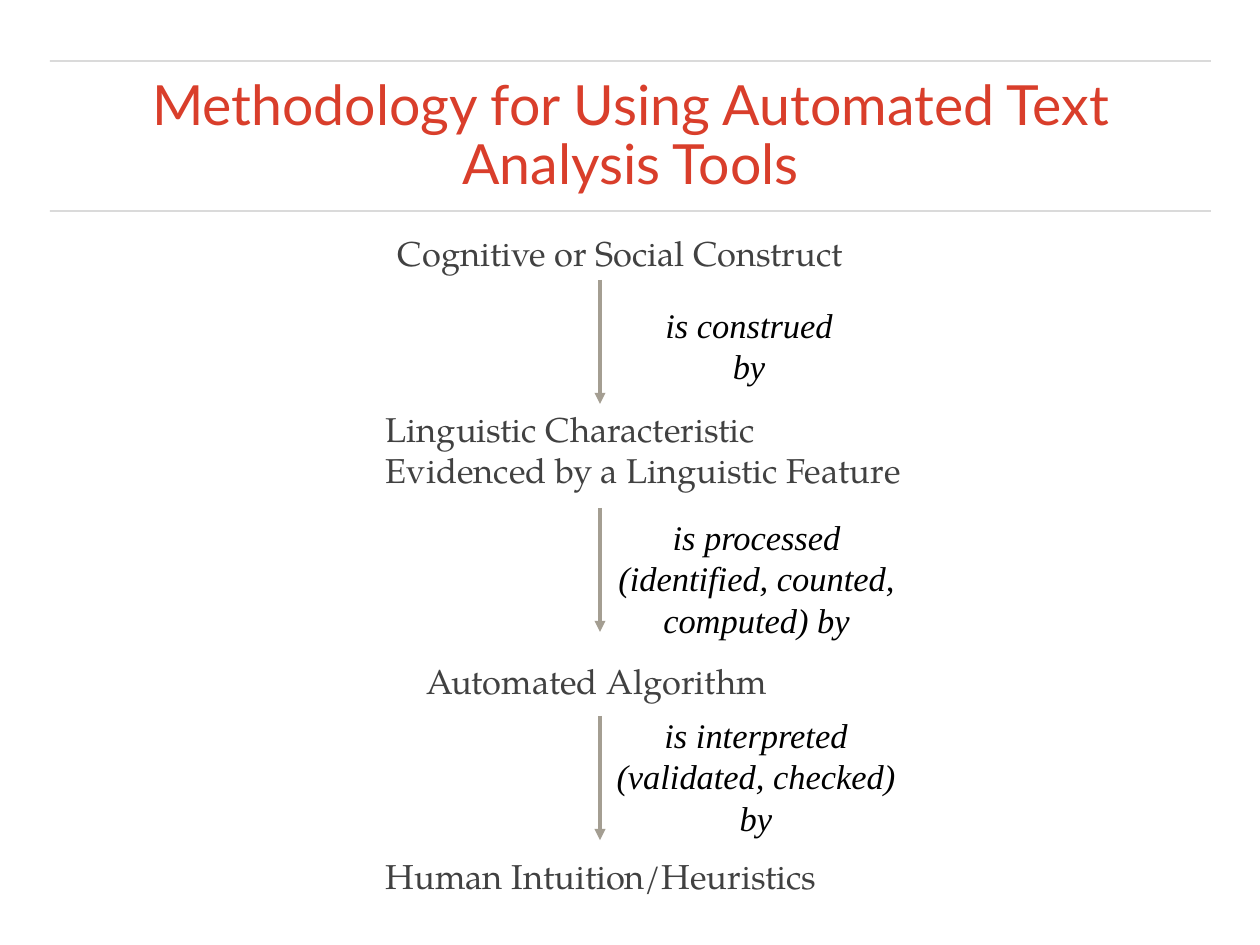
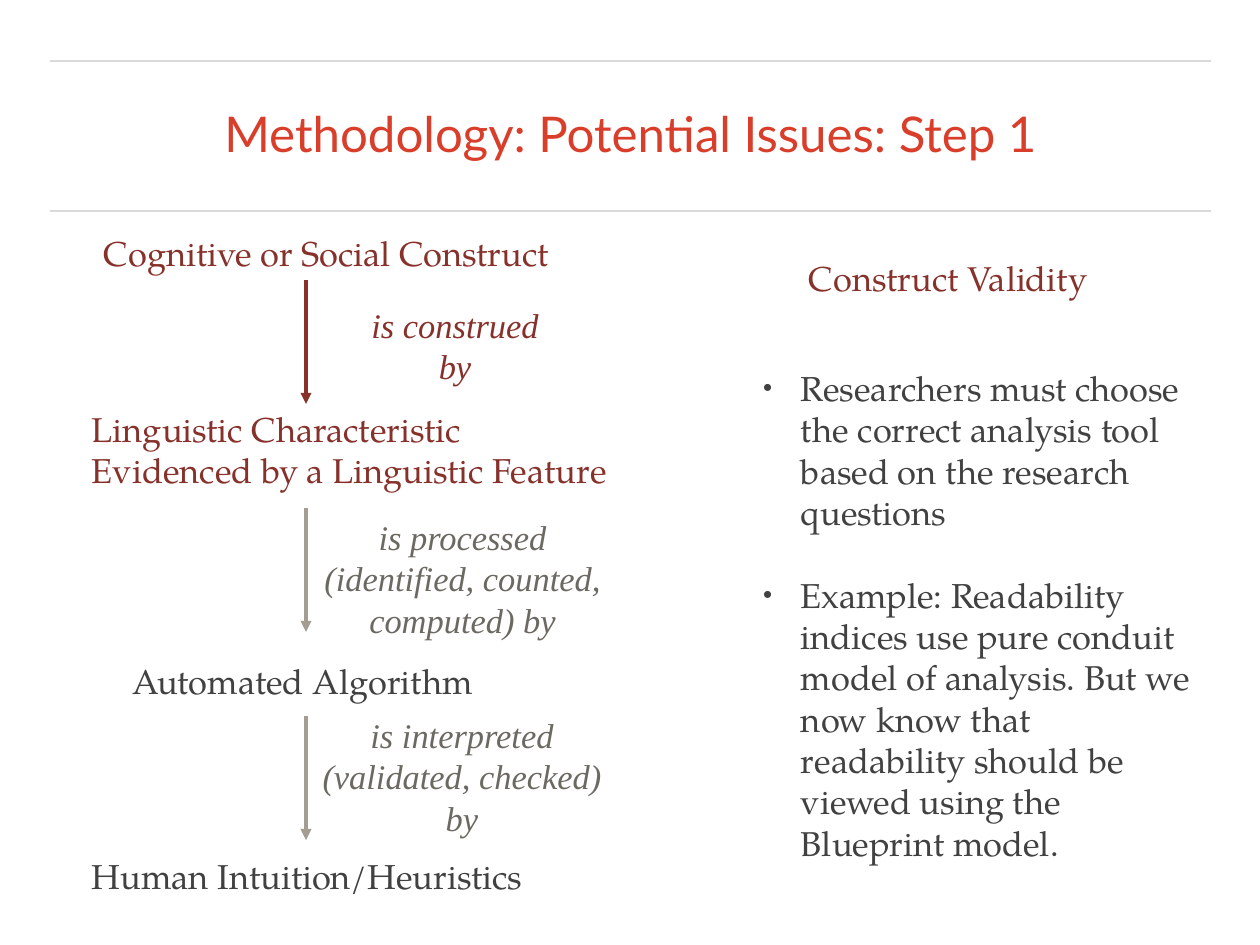
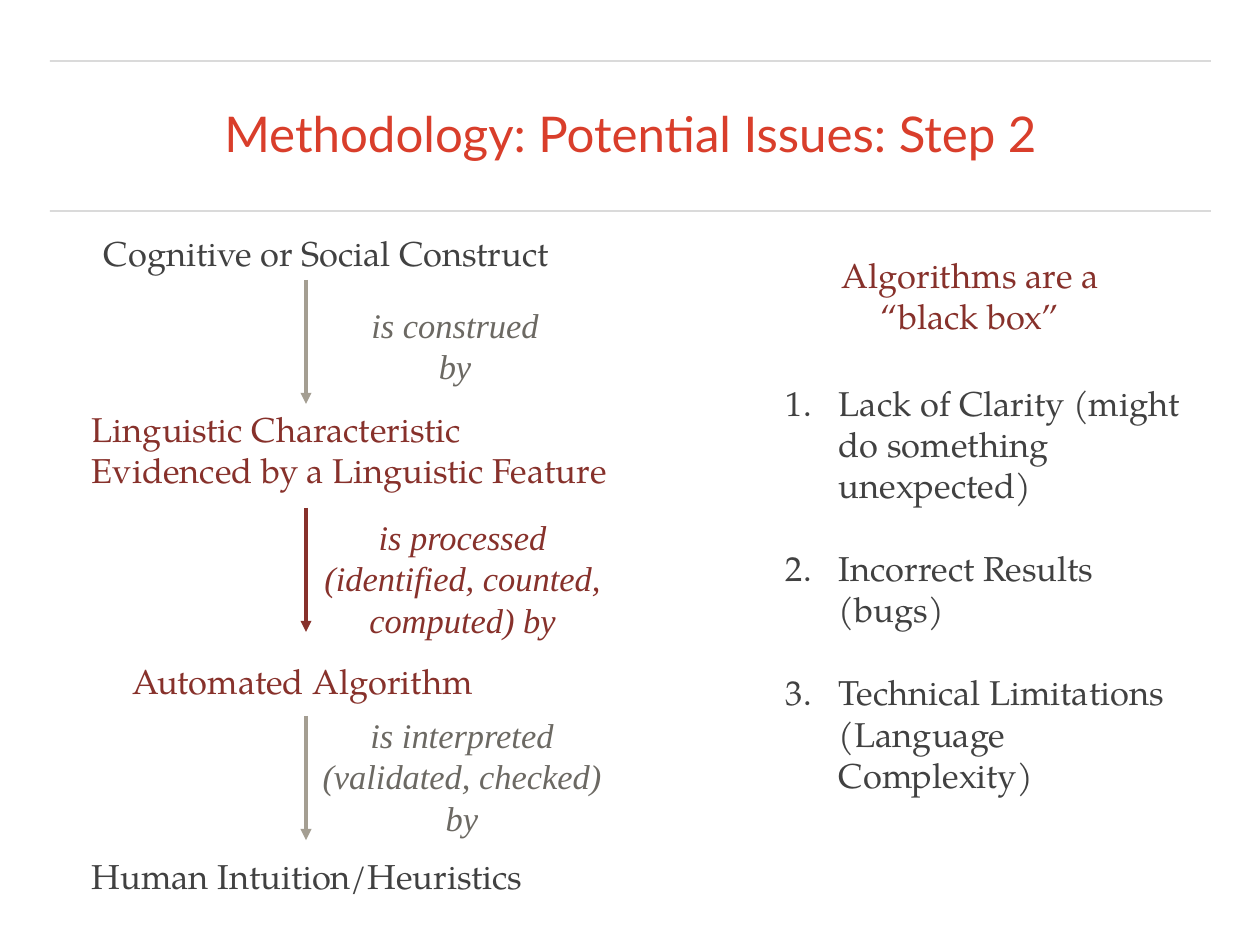
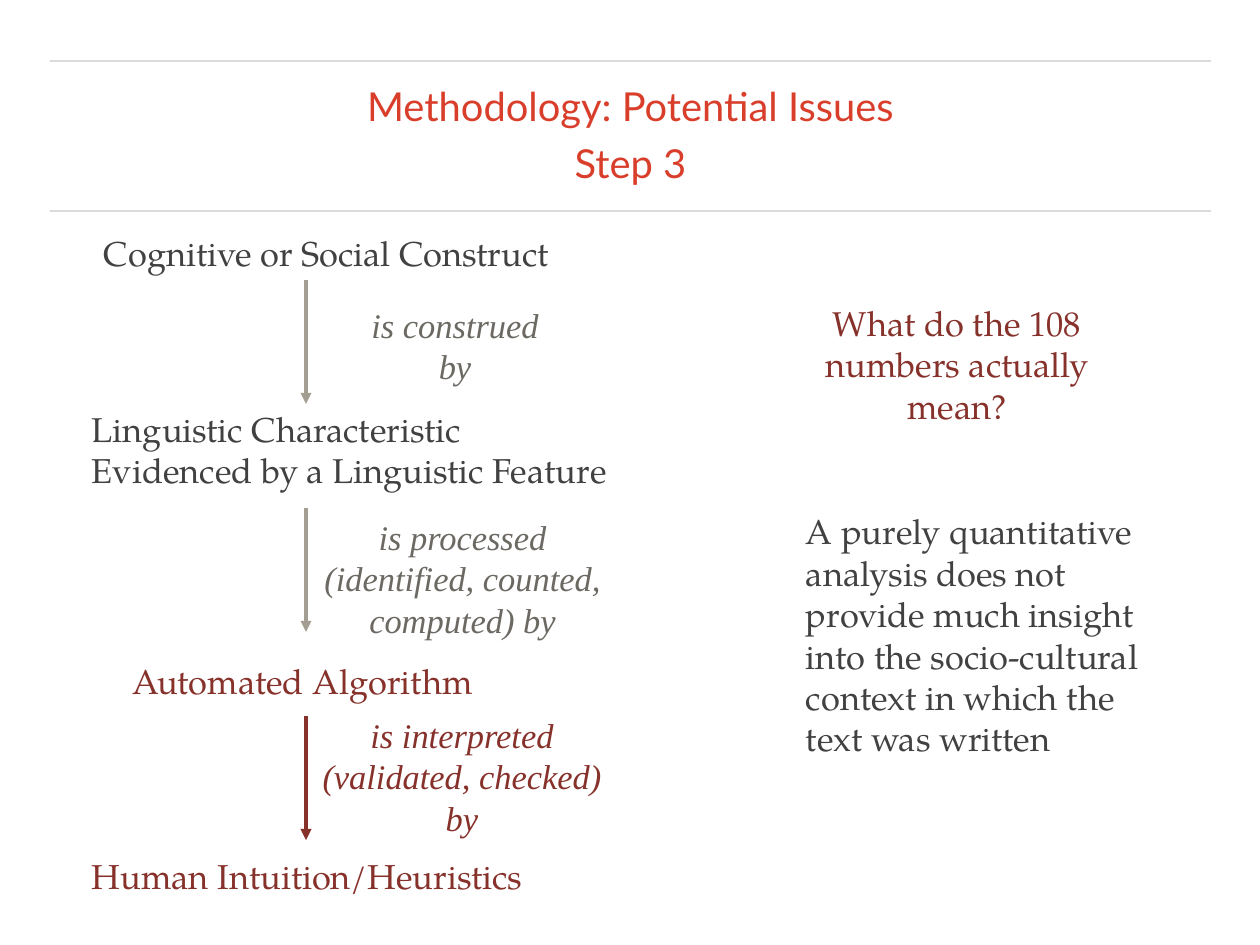
from dataclasses import dataclass

from lxml import etree
from pptx import Presentation, util as u
from pptx.dml.color import RGBColor
from pptx.enum import shapes, text
from pptx.oxml import ns

PX = 10320
SLIDE_SIZE = (1260, 945)
TITLE_BOX = (50, 78, 1161, 118)
RULES = (61, 211)
TITLE_ONLY, TITLE_AND_LIST = 5, 1


@dataclass(frozen=True)
class Theme:
    title: str = "D93E2B"
    rule: str = "444444"
    body: str = "414141"
    accent: str = "87312B"
    muted: str = "6C6963"
    strong: str = "000000"
    arrow: str = "A49E92"
    title_font: str = "Lato"
    body_font: str = "TeX Gyre Pagella"
    link_font: str = "Times New Roman"
    title_large: float = 45
    title_medium: float = 40
    title_small: float = 32.4
    body_size: float = 28
    arrow_width: float = 3
    rule_width: float = 1


THEME = Theme()
LEFT, CENTER = text.PP_ALIGN.LEFT, text.PP_ALIGN.CENTER

# Text and box, relative to the flow's left and top
STAGES = (
    ("Cognitive or Social Construct", (12, 0, 496, 56)),
    ("Linguistic Characteristic\vEvidenced by a Linguistic Feature", (0, 174, 533, 101)),
    ("Automated Algorithm", (40, 428, 416, 56)),
    ("Human Intuition/Heuristics", (0, 623, 497, 56)),
)
# Text, box and top of the arrow beside it
LINKS = (
    ("is construed by", (272, 72, 182, 96), 55),
    ("is processed (identified, counted, computed) by", (219, 289, 303, 128), 283),
    ("is interpreted (validated, checked) by", (228, 487, 284, 128), 491),
)
ARROW_X, ARROW_LENGTH = 214, 124


def emu(*lengths):
    return [length * PX for length in lengths]


def font_format(name, size, color, italic=False):
    return {"name": name, "size": u.Pt(size), "italic": italic, "color": color}


def body_format(color):
    return font_format(THEME.body_font, THEME.body_size, color)


def link_format(color):
    return font_format(THEME.link_font, THEME.body_size, color, italic=True)


def write(frame, lines, font, align=LEFT, spacing=1.0, gap=0):
    """Fill a frame with one paragraph per line; gap is points between them."""
    layout = {"word_wrap": True, "auto_size": text.MSO_AUTO_SIZE.NONE,
              "vertical_anchor": text.MSO_ANCHOR.MIDDLE,
              "margin_left": 0, "margin_top": 0, "margin_right": 0, "margin_bottom": 0}
    for name, value in layout.items():
        setattr(frame, name, value)
    for index, line in enumerate(lines):
        paragraph = frame.add_paragraph() if index else frame.paragraphs[0]
        paragraph.text = line
        settings = {"alignment": align, "line_spacing": spacing,
                    "space_before": u.Pt(gap if index else 0), "space_after": u.Pt(0)}
        for name, value in settings.items():
            setattr(paragraph, name, value)
        for run in paragraph.runs:
            for name, value in font.items():
                if name == "color":
                    run.font.color.rgb = RGBColor.from_string(value)
                else:
                    setattr(run.font, name, value)


def add_text(slide, box, line, font, align=LEFT):
    write(slide.shapes.add_textbox(*emu(*box)).text_frame, [line], font, align)


def place(placeholder, box):
    for side, value in zip(("left", "top", "width", "height"), emu(*box)):
        setattr(placeholder, side, value)


def add_line(slide, start, end, color, width):
    line = slide.shapes.add_connector(shapes.MSO_CONNECTOR.STRAIGHT, *emu(*start, *end))
    line.line.color.rgb = RGBColor.from_string(color)
    line.line.width = u.Pt(width)
    etree.SubElement(line.element.spPr, ns.qn("a:effectLst"))
    return line


def add_arrow(slide, start, end, color):
    arrow = add_line(slide, start, end, color, THEME.arrow_width)
    outline = arrow.element.spPr.find(ns.qn("a:ln"))
    etree.SubElement(outline, ns.qn("a:tailEnd"), type="triangle")


def add_master_rules(prs, slide):
    """Draw the two title rules and hand them to the slide master."""
    left, _, width, _ = TITLE_BOX
    for number, y in enumerate(RULES):
        rule = add_line(slide, (left, y), (left + width, y), THEME.rule, THEME.rule_width).element
        etree.SubElement(rule.find(".//" + ns.qn("a:srgbClr")), ns.qn("a:alpha"), val="30000")
        rule.nvCxnSpPr.cNvPr.set("id", str(100 + number))
        prs.slide_master.shapes.element.insert_element_before(rule, "p:extLst")


def add_titled_slide(prs, layout, title_lines, size):
    slide = prs.slides.add_slide(prs.slide_layouts[layout])
    place(slide.shapes.title, TITLE_BOX)
    write(slide.shapes.title.text_frame, title_lines,
          font_format(THEME.title_font, size, THEME.title), CENTER, spacing=0.9, gap=12)
    return slide


def add_flow(slide, left, top, link_color, step=None):
    """Draw the four stages, with the stages and link of one step in the accent colour."""
    def shift(box):
        return (left + box[0], top + box[1], *box[2:])

    for number, (stage, box) in enumerate(STAGES, 1):
        active = step is not None and number in (step, step + 1)
        add_text(slide, shift(box), stage, body_format(THEME.accent if active else THEME.body))
    for number, (link, box, arrow_top) in enumerate(LINKS, 1):
        active = number == step
        add_text(slide, shift(box), link,
                 link_format(THEME.accent if active else link_color), CENTER)
        x, y = left + ARROW_X, top + arrow_top
        add_arrow(slide, (x, y), (x, y + ARROW_LENGTH), THEME.accent if active else THEME.arrow)


def add_list(slide, box, items, indent, marks):
    """Fill the body placeholder; marks are the bullet elements with their attributes."""
    body = slide.placeholders[1]
    place(body, box)
    write(body.text_frame, items, body_format(THEME.body), gap=33.6)
    for paragraph in body.text_frame.paragraphs:
        properties = paragraph._p.get_or_add_pPr()
        properties.set("marL", str(indent * PX))
        properties.set("indent", str(-indent * PX))
        for tag, attributes in marks:
            etree.SubElement(properties, ns.qn(tag), **attributes)


def add_issue_slide(prs, layout, step, title_lines, size, heading, heading_box, align=CENTER):
    slide = add_titled_slide(prs, layout, title_lines, size)
    add_text(slide, heading_box, heading, body_format(THEME.accent), align)
    add_flow(slide, 92, 225, THEME.muted, step)
    return slide


def main():
    prs = Presentation()
    prs.slide_width, prs.slide_height = emu(*SLIDE_SIZE)

    overview = add_titled_slide(prs, TITLE_ONLY,
                                ["Methodology for Using Automated Text Analysis Tools"],
                                THEME.title_large)
    add_master_rules(prs, overview)
    add_flow(overview, 386, 225, THEME.strong)

    validity = add_issue_slide(prs, TITLE_AND_LIST, 1, ["Methodology: Potential Issues: Step 1"],
                               THEME.title_medium, "Construct Validity",
                               (809, 250, 346, 56), LEFT)
    add_list(validity, (763, 337, 439, 556), [
        "Researchers must choose the correct analysis tool based on the research questions",
        "Example: Readability indices use pure conduit model of analysis. But we now know "
        "that readability should be viewed using the Blueprint model.",
    ], 38, [("a:buSzPct", {"val": "75000"}), ("a:buChar", {"char": "•"})])

    black_box = add_issue_slide(prs, TITLE_AND_LIST, 2, ["Methodology: Potential Issues: Step 2"],
                                THEME.title_medium, "Algorithms are a “black box”",
                                (797, 245, 346, 101))
    add_list(black_box, (786, 356, 416, 465), [
        "Lack of Clarity (might do something unexpected)",
        "Incorrect Results (bugs)",
        "Technical Limitations (Language Complexity)",
    ], 53, [("a:buFont", {"typeface": "+mj-lt"}), ("a:buAutoNum", {"type": "arabicPeriod"})])

    meaning = add_issue_slide(prs, TITLE_ONLY, 3, ["Methodology: Potential Issues", "Step 3"],
                              THEME.title_small, "What do the 108 numbers actually mean?",
                              (784, 291, 346, 146))
    add_text(meaning, (806, 493, 346, 283),
             "A purely quantitative analysis does not provide much insight into the "
             "socio-cultural context in which the text was written", body_format(THEME.body))

    prs.save("out.pptx")


if __name__ == "__main__":
    main()
